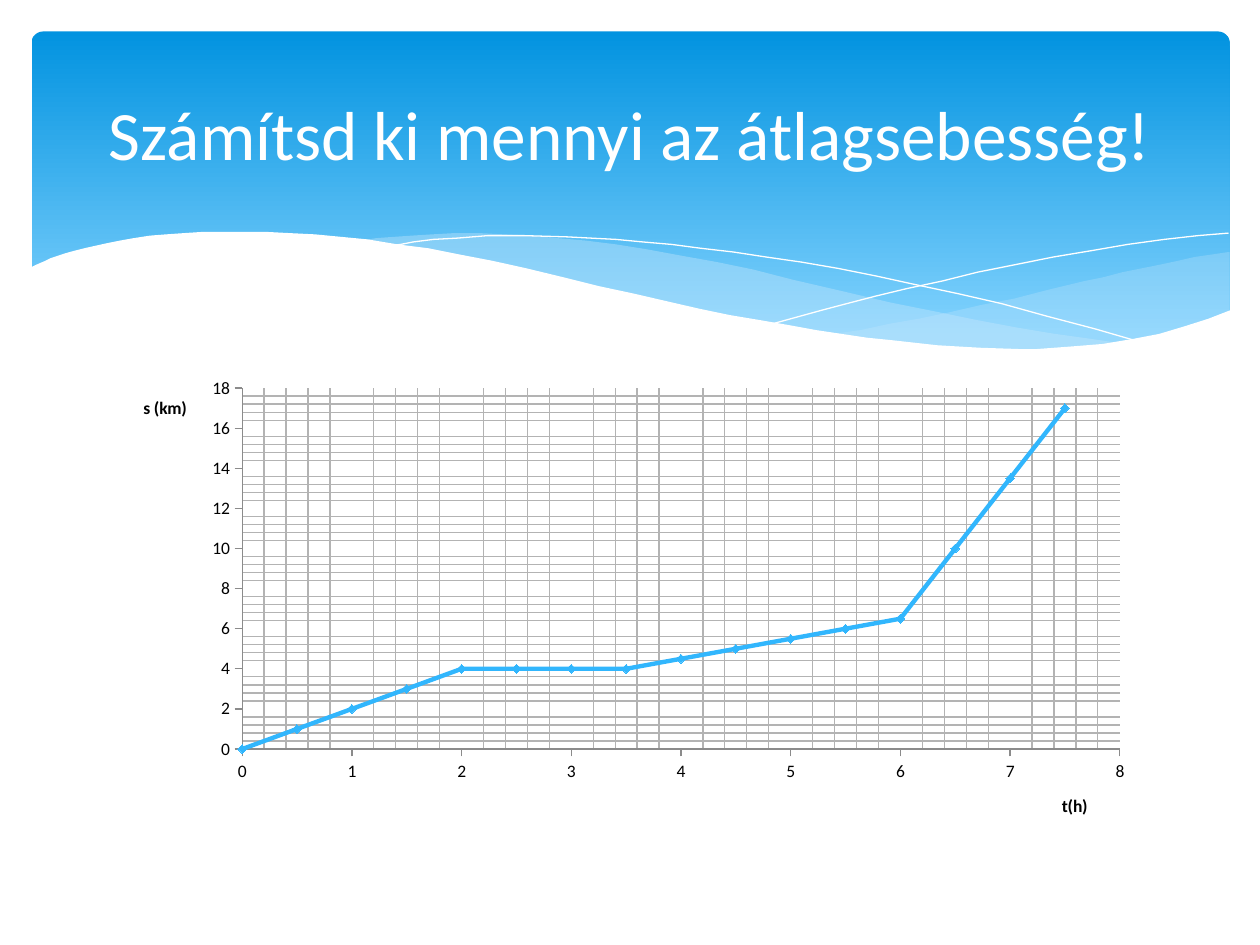
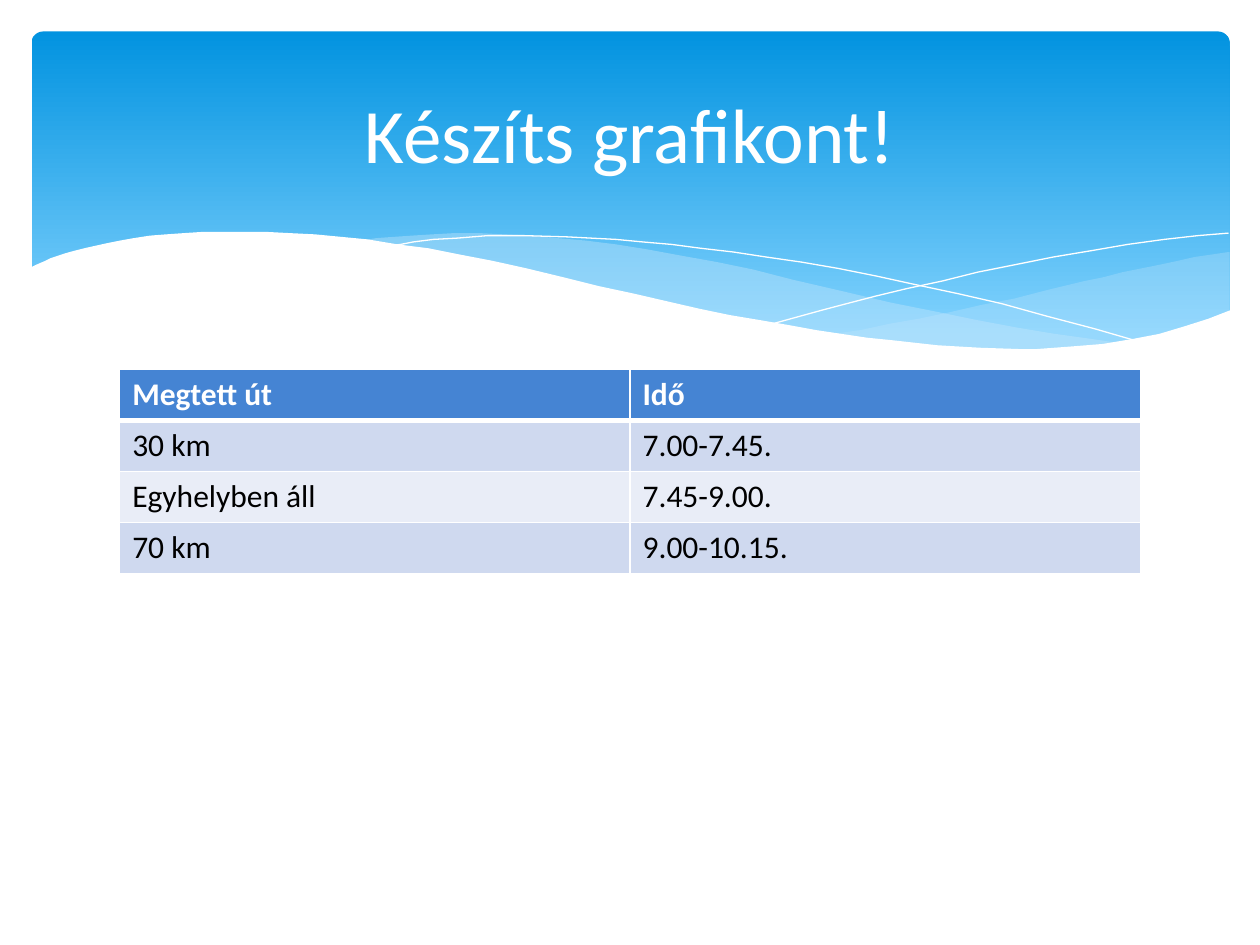
from lxml import etree
from pptx import Presentation
from pptx.chart.data import XyChartData
from pptx.dml.color import RGBColor
from pptx.enum.chart import XL_CHART_TYPE, XL_MARKER_STYLE, XL_TICK_MARK
from pptx.enum.shapes import MSO_SHAPE
from pptx.enum.text import MSO_ANCHOR, PP_ALIGN
from pptx.oxml.ns import qn
from pptx.util import Inches, Pt

SCATTER = XL_CHART_TYPE.XY_SCATTER_SMOOTH
DIAMOND = XL_MARKER_STYLE.DIAMOND
TICK_OUT, TICK_NONE = XL_TICK_MARK.OUTSIDE, XL_TICK_MARK.NONE
ROUNDED = MSO_SHAPE.ROUNDED_RECTANGLE
MIDDLE, CENTER = MSO_ANCHOR.MIDDLE, PP_ALIGN.CENTER

FONT = "Calibri"
COLORS = {
    "white": "FFFFFF", "black": "000000",
    "band top": "0293E0", "band bottom": "83D3FE", "wave": "C6E7FC",
    "curve": "31B6FD", "grid": "B3B3B3", "axis": "8B8B8B",
    "header": "4584D3", "odd row": "CFD9EF", "even row": "E9EDF7",
}

# Content
CHART_TITLE = "Számítsd ki mennyi az átlagsebesség!"
TABLE_TITLE = "Készíts grafikont!"
DISTANCES = [0, 1, 2, 3, 4, 4, 4, 4, 4.5, 5, 5.5, 6, 6.5, 10, 13.5, 17]  # every half hour
HOURS_STEP = 0.5
TRIP_ROWS = [
    ("Megtett út", "Idő"),
    ("30 km", "7.00-7.45."),
    ("Egyhelyben áll", "7.45-9.00."),
    ("70 km", "9.00-10.15."),
]

# Places: left, top, width, height in inches
BAND_BOX = (0.25, 0.25, 9.51, 2.7)
TITLE_BOX = (0.5, 0.37, 9, 1.37)
CHART_BOX = (0.95, 2.93, 8.1, 3.77)
TABLE_BOX = (0.95, 2.93, 8.1, 1.62)

# Wave outlines in inches, from back to front
RIGHT_WAVE = [
    (9.75, 2), (9.62, 2.02), (9.48, 2.04), (9.35, 2.07), (9.21, 2.1), (9.06, 2.13),
    (8.91, 2.16), (8.76, 2.2), (8.61, 2.23), (8.32, 2.3), (8.05, 2.37), (7.79, 2.42),
    (7.53, 2.48), (7.29, 2.53), (7.06, 2.57), (6.83, 2.62), (6.61, 2.65), (6.76, 2.67),
    (6.91, 2.69), (7.05, 2.71), (7.19, 2.72), (7.32, 2.74), (7.45, 2.75), (7.57, 2.76),
    (7.69, 2.77), (7.92, 2.77), (8.14, 2.78), (8.44, 2.77), (8.63, 2.75), (8.81, 2.73),
    (8.97, 2.7), (9.13, 2.67), (9.28, 2.63), (9.42, 2.59), (9.63, 2.52), (9.76, 2.47),
    (9.76, 2),
]
MIDDLE_WAVE = [
    (8.93, 2.73), (8.66, 2.69), (8.37, 2.65), (8.07, 2.6), (7.75, 2.54), (7.41, 2.47),
    (7.06, 2.4), (6.68, 2.31), (6.29, 2.22), (5.98, 2.14), (5.69, 2.08), (5.41, 2.03),
    (5.14, 1.98), (4.89, 1.94), (4.65, 1.91), (4.42, 1.89), (4.2, 1.87), (3.99, 1.86),
    (3.8, 1.85), (3.61, 1.85), (3.44, 1.86), (3.28, 1.87), (3.13, 1.88), (2.99, 1.89),
    (2.86, 1.91), (3.04, 1.94), (3.23, 1.96), (3.42, 1.99), (3.62, 2.03), (3.83, 2.07),
    (4.04, 2.11), (4.27, 2.16), (4.49, 2.22), (4.91, 2.32), (5.3, 2.4), (5.66, 2.48),
    (6.01, 2.55), (6.34, 2.61), (6.65, 2.66), (6.95, 2.7), (7.22, 2.74), (7.48, 2.76),
    (7.73, 2.77), (7.96, 2.78), (8.38, 2.78), (8.57, 2.77), (8.76, 2.75),
]
FALLING_LINE = [
    (3.09, 1.95), (3.18, 1.94), (3.28, 1.92), (3.44, 1.9), (3.63, 1.89), (3.87, 1.87),
    (4.16, 1.87), (4.5, 1.88), (4.69, 1.89), (4.89, 1.9), (5.1, 1.92), (5.33, 1.94),
    (5.56, 1.97), (5.82, 2), (6.08, 2.04), (6.36, 2.08), (6.65, 2.13), (6.95, 2.19),
    (7.27, 2.26), (7.6, 2.33), (7.95, 2.41), (8.31, 2.51), (8.69, 2.61), (9.07, 2.72),
]
RISING_LINE = [
    (6.13, 2.57), (6.53, 2.46), (6.72, 2.41), (6.95, 2.35), (7.2, 2.29), (7.48, 2.23),
    (7.76, 2.16), (8.06, 2.1), (8.36, 2.04), (8.66, 1.99), (8.95, 1.94), (9.24, 1.9),
    (9.51, 1.87), (9.75, 1.85),
]
WHITE_WAVE = [
    (9.77, 2.46), (9.59, 2.53), (9.4, 2.59), (9.2, 2.65), (8.99, 2.69), (8.75, 2.73),
    (8.5, 2.75), (8.23, 2.77), (8.09, 2.77), (7.78, 2.76), (7.61, 2.75), (7.44, 2.74),
    (7.26, 2.72), (7.08, 2.7), (6.88, 2.68), (6.68, 2.65), (6.48, 2.62), (6.26, 2.58),
    (6.03, 2.54), (5.79, 2.5), (5.55, 2.45), (5.29, 2.39), (5.03, 2.33), (4.75, 2.27),
    (4.47, 2.2), (4.18, 2.13), (3.91, 2.07), (3.65, 2.02), (3.4, 1.97), (3.16, 1.94),
    (2.92, 1.9), (2.71, 1.88), (2.5, 1.86), (2.3, 1.85), (2.11, 1.84), (1.77, 1.84),
    (1.61, 1.84), (1.46, 1.85), (1.32, 1.86), (1.19, 1.87), (1.06, 1.89), (0.95, 1.91),
    (0.85, 1.93), (0.76, 1.95), (0.67, 1.97), (0.59, 1.99), (0.52, 2.01), (0.46, 2.03),
    (0.4, 2.05), (0.36, 2.07), (0.29, 2.1), (0.23, 2.13), (0.23, 3.29), (9.77, 3.29),
]
# points, fill colour (None for an open line), opacity in percent
WAVES = [
    (RIGHT_WAVE, "wave", 29),
    (MIDDLE_WAVE, "wave", 40),
    (FALLING_LINE, None, 100),
    (RISING_LINE, None, 100),
    (WHITE_WAVE, "white", 100),
]


def color(name):
    return RGBColor.from_string(COLORS[name])


def inches(box):
    return [Inches(length) for length in box]


def set_font(font, size, color_name, bold=False):
    font.name, font.size, font.bold = FONT, Pt(size), bold
    font.color.rgb = color(color_name)


def add_line_color(line, name):
    """Give a line element a solid colour."""
    fill = etree.SubElement(line, qn("a:solidFill"))
    etree.SubElement(fill, qn("a:srgbClr"), val=COLORS[name])


# Shared band and waves
def add_band(shapes):
    band = shapes.add_shape(ROUNDED, *inches(BAND_BOX))
    band.adjustments[0] = 0.034
    band.shadow.inherit = False
    band.line.fill.background()
    band.fill.gradient()
    band.fill.gradient_angle = 270
    stops = [("band top", 0), ("band bottom", 0.9)]
    for stop, (name, position) in zip(band.fill.gradient_stops, stops):
        stop.color.rgb = color(name)
        stop.position = position
    return band


def add_wave(shapes, points, fill_name, opacity):
    corners = [inches(point) for point in points]
    builder = shapes.build_freeform(*corners[0])
    builder.add_line_segments(corners[1:], close=fill_name is not None)
    wave = builder.convert_to_shape()
    wave.shadow.inherit = False
    if fill_name is None:
        wave.fill.background()
        wave.line.color.rgb = color("white")
        wave.line.width = Pt(0)
        return wave
    wave.line.fill.background()
    wave.fill.solid()
    wave.fill.fore_color.rgb = color(fill_name)
    if opacity < 100:
        rgb = next(wave.element.spPr.iter(qn("a:srgbClr")))
        etree.SubElement(rgb, qn("a:alpha"), val=str(opacity * 1000))
    return wave


def move_to_layout(parts, layout):
    for index, part in enumerate(parts, start=2):
        layout.shapes.element.insert(index, part.element)


def set_title(slide, text, size):
    title = slide.shapes.title
    title.left, title.top, title.width, title.height = inches(TITLE_BOX)
    title.text_frame.text = text
    title.text_frame.word_wrap = True
    title.text_frame.vertical_anchor = MIDDLE
    paragraph = title.text_frame.paragraphs[0]
    paragraph.alignment = CENTER
    set_font(paragraph.font, size, "white")


# Distance-time chart
def set_layout(parent, index, **values):
    """Place a chart part by fractions of the chart's size."""
    for old in parent.findall(qn("c:layout")):
        parent.remove(old)
    layout = etree.Element(qn("c:layout"))
    manual = etree.SubElement(layout, qn("c:manualLayout"))
    if "w" in values:
        etree.SubElement(manual, qn("c:layoutTarget"), val="inner")
    for side in ("x", "y"):
        etree.SubElement(manual, qn(f"c:{side}Mode"), val="edge")
    for name, value in values.items():
        etree.SubElement(manual, qn(f"c:{name}"), val=str(value))
    parent.insert(index, layout)


def format_axis(axis, title, maximum, major_unit, title_x, title_y):
    axis.minimum_scale, axis.maximum_scale = 0, maximum
    axis.major_unit, axis.minor_unit = major_unit, major_unit / 5
    axis.has_major_gridlines, axis.has_minor_gridlines = False, True
    gridlines = axis._element.find(qn("c:minorGridlines"))
    properties = etree.SubElement(gridlines, qn("c:spPr"))
    add_line_color(etree.SubElement(properties, qn("a:ln")), "grid")
    axis.major_tick_mark, axis.minor_tick_mark = TICK_OUT, TICK_NONE
    axis.format.line.color.rgb = color("axis")
    axis.tick_labels.number_format = "General"
    axis.tick_labels.number_format_is_linked = False
    frame = axis.axis_title.text_frame
    frame.text = title
    set_font(frame.paragraphs[0].font, 10, "black", bold=True)
    body = next(axis.axis_title._element.iter(qn("a:bodyPr")))
    body.set("rot", "0")
    body.set("vert", "horz")
    set_layout(axis.axis_title._element, 1, x=title_x, y=title_y)


def add_distance_chart(slide):
    data = XyChartData()
    points = data.add_series("Series 1")
    for index, distance in enumerate(DISTANCES):
        points.add_data_point(index * HOURS_STEP, distance)
    chart = slide.shapes.add_chart(SCATTER, *inches(CHART_BOX), data).chart
    chart.has_legend = chart.has_title = False
    set_font(chart.font, 10, "black")
    chart.plots[0].vary_by_categories = False
    set_layout(next(chart._chartSpace.iter(qn("c:plotArea"))), 0,
               x=0.12, y=0.04, w=0.86, h=0.76)
    format_axis(chart.category_axis, "t(h)", 8, 1, 0.92, 0.89)
    format_axis(chart.value_axis, "s (km)", 18, 2, 0.02, 0.05)

    series = chart.plots[0].series[0]
    series.smooth = True
    series.format.line.color.rgb = color("curve")
    series.format.line.width = Pt(2.5)
    series.marker.style, series.marker.size = DIAMOND, 5
    series.marker.format.fill.solid()
    series.marker.format.fill.fore_color.rgb = color("curve")
    series.marker.format.line.color.rgb = color("curve")


# Trip table
def set_border(cell, side, width):
    properties = cell._tc.get_or_add_tcPr()
    line = etree.SubElement(properties, qn(f"a:ln{side}"), w=str(Pt(width)))
    add_line_color(line, "white")


def add_trip_table(slide):
    frame = slide.shapes.add_table(len(TRIP_ROWS), len(TRIP_ROWS[0]), *inches(TABLE_BOX))
    for row, texts in enumerate(TRIP_ROWS):
        is_header = row == 0
        fill_name = "header" if is_header else "odd row" if row % 2 else "even row"
        widths = {"L": 1, "R": 1, "T": 3 if row == 1 else 1, "B": 3 if is_header else 1}
        for column, text in enumerate(texts):
            cell = frame.table.cell(row, column)
            cell.text = text
            set_font(cell.text_frame.paragraphs[0].font, 18,
                     "white" if is_header else "black", bold=is_header)
            for side, width in widths.items():
                set_border(cell, side, width)
            cell.fill.solid()
            cell.fill.fore_color.rgb = color(fill_name)


def main():
    presentation = Presentation()
    presentation.slide_width, presentation.slide_height = Inches(10), Inches(7.5)
    layout = presentation.slide_layouts[5]

    chart_slide = presentation.slides.add_slide(layout)
    shapes = chart_slide.shapes
    move_to_layout([add_band(shapes)] + [add_wave(shapes, *wave) for wave in WAVES], layout)
    set_title(chart_slide, CHART_TITLE, 39.6)
    add_distance_chart(chart_slide)

    table_slide = presentation.slides.add_slide(layout)
    set_title(table_slide, TABLE_TITLE, 44)
    add_trip_table(table_slide)

    presentation.save("out.pptx")


if __name__ == "__main__":
    main()
